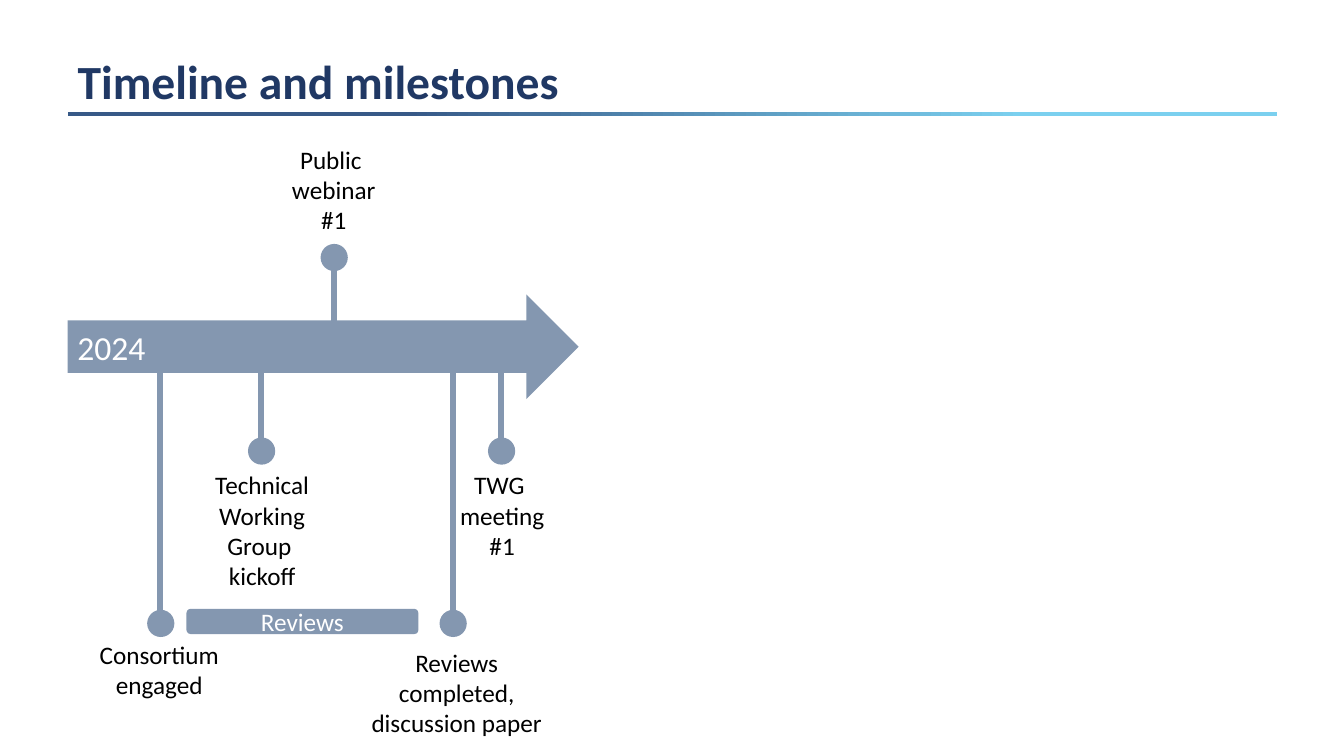
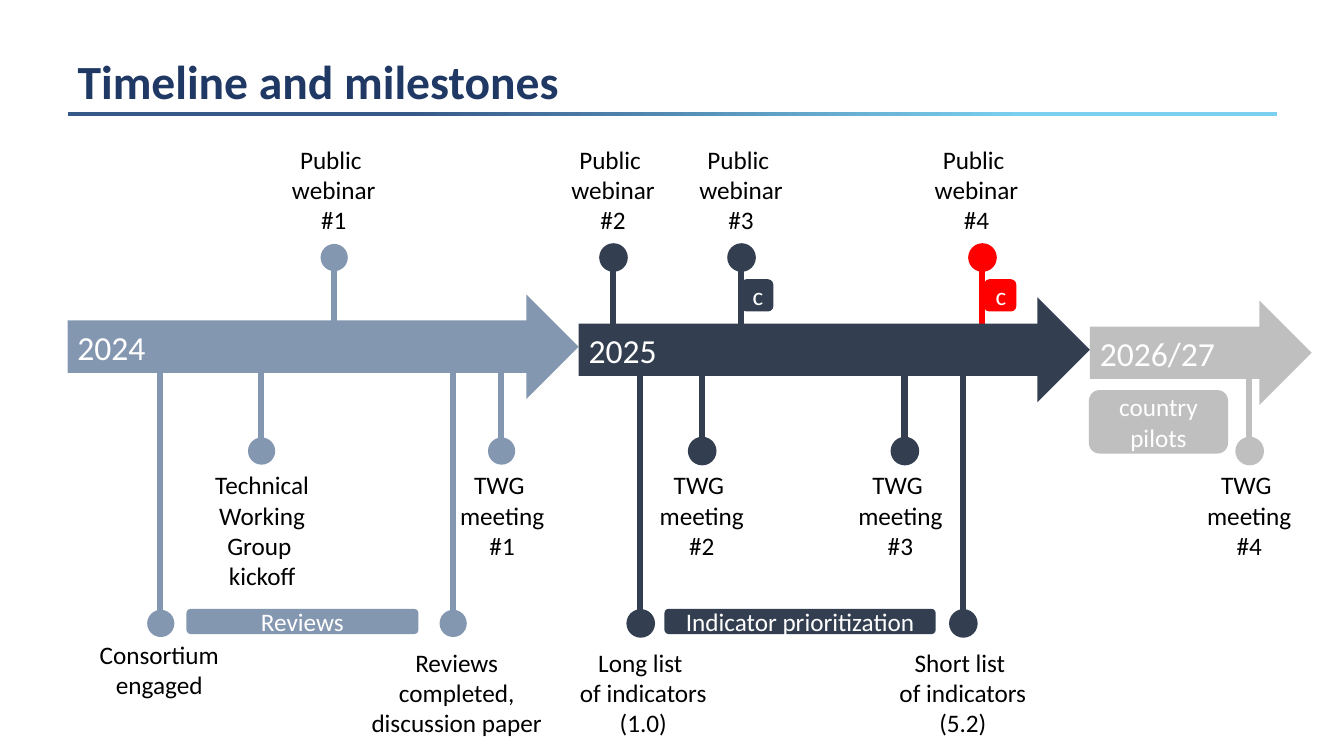
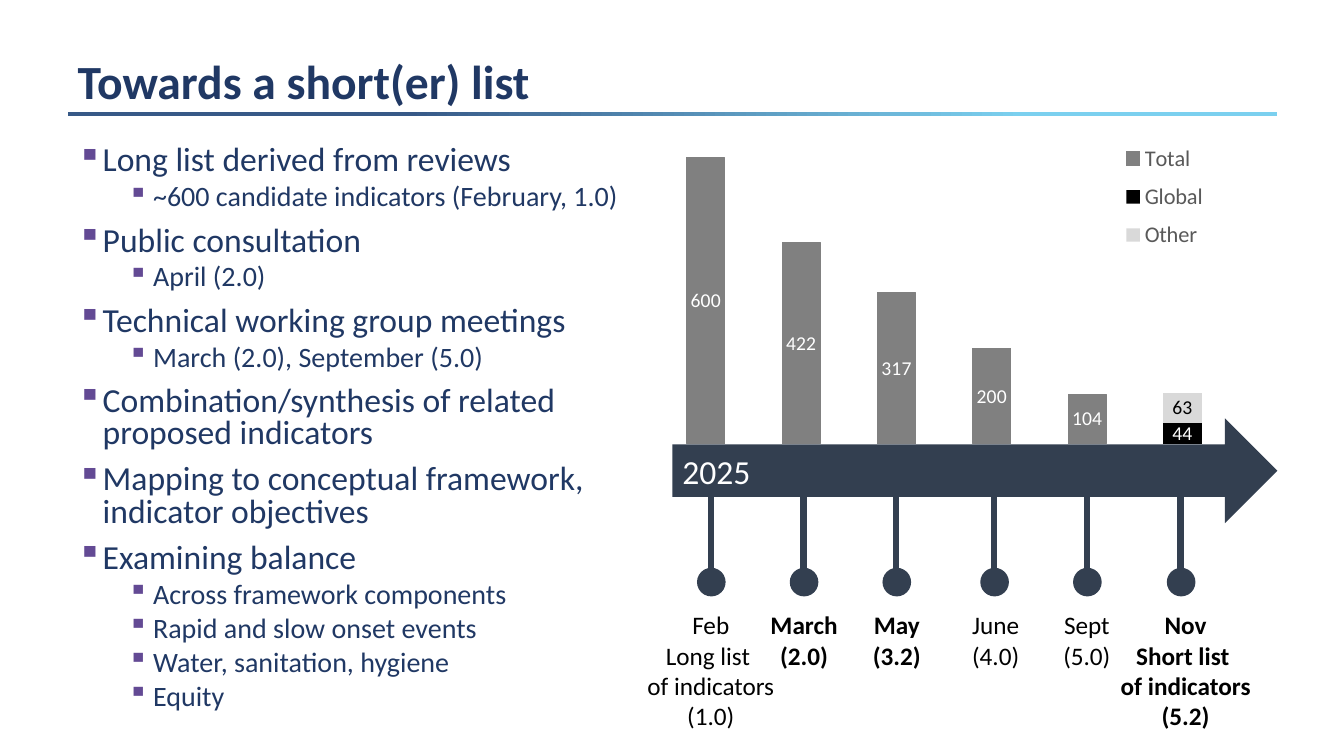
"""Build three slides on the timeline and milestones of an indicator list."""
from dataclasses import dataclass
from typing import NamedTuple

import lxml.etree
import pptx
import pptx.chart.data
import pptx.dml.color
import pptx.enum.chart
import pptx.enum.shapes
import pptx.enum.text
import pptx.oxml.ns
import pptx.util

SCALE = 9144
FONT = "Calibri"
COLOURS = {
    "title": "203864", "rule_start": "375987", "rule_end": "7BD0EF",
    "slate": "8497B0", "navy": "333F50", "pale": "BFBFBF", "alert": "FF0000",
    "black": "000000", "white": "FFFFFF", "bullet": "634A94",
    "total": "808080", "other": "D9D9D9", "legend": "595959",
}
SHAPE = pptx.enum.shapes.MSO_SHAPE
ALIGN = pptx.enum.text.PP_ALIGN
ANCHOR = pptx.enum.text.MSO_ANCHOR
FIT = pptx.enum.text.MSO_AUTO_SIZE
qn = pptx.oxml.ns.qn


class Reach(NamedTuple):
    """Vertical positions of a pin's line, dot and label."""
    start: int
    end: int
    dot: int
    label: int


UP = Reach(323, 265, 242, 138)
MID = Reach(328, 438, 434, 461)
LOW = Reach(369, 609, 605, 637)
MONTH = Reach(467, 569, 564, 600)
DOT = 27


@dataclass(frozen=True)
class Milestone:
    """A pin on the timeline with its label."""
    x: int
    reach: Reach
    tone: str
    text: str
    left: int
    width: int
    rows: int = 3
    bold: bool = False


@dataclass(frozen=True)
class Block:
    """A filled shape with white text."""
    kind: pptx.enum.shapes.MSO_SHAPE
    left: int
    top: int
    width: int
    height: int
    tone: str
    text: str


class Series(NamedTuple):
    """One chart series with its fill and label colours."""
    name: str
    values: tuple
    tone: str
    label: str


def arrow(left: int, top: int, width: int, tone: str, text: str) -> Block:
    """Describe a year arrow."""
    return Block(SHAPE.RIGHT_ARROW, left, top, width, 104, tone, text)


def tag(left: int, top: int, width: int, height: int, tone: str, text: str) -> Block:
    """Describe a rounded tag."""
    return Block(SHAPE.ROUNDED_RECTANGLE, left, top, width, height, tone, text)


def webinar(x: int, number: int, tone: str, left: int, width: int) -> Milestone:
    """Describe a public webinar above the arrow."""
    return Milestone(x, UP, tone, f"Public \nwebinar\n#{number}", left, width)


def meeting(x: int, number: int, tone: str, left: int) -> Milestone:
    """Describe a working group meeting below the arrow."""
    return Milestone(x, MID, tone, f"TWG \nmeeting\n#{number}", left, 128)


PINS_2024 = [
    Milestone(159, LOW._replace(label=629), "slate", "Consortium engaged", 63, 190, 2),
    Milestone(259, MID, "slate", "Technical Working Group \nkickoff", 176, 168, 4),
    webinar(331, 1, "slate", 277, 108),
    Milestone(449, LOW, "slate", "Reviews completed, discussion paper", 358, 190),
    meeting(497, 1, "slate", 434),
]
BLOCKS_2024 = [
    arrow(67, 292, 507, "slate", "2024"),
    tag(185, 604, 230, 25, "slate", "Reviews"),
]
PINS_LATER = [
    webinar(608, 2, "navy", 556, 104),
    Milestone(635, LOW, "navy", "Long list \vof indicators (1.0)", 543, 190),
    meeting(696, 2, "navy", 632),
    webinar(735, 3, "navy", 680, 110),
    meeting(897, 3, "navy", 829),
    Milestone(955, LOW, "navy", "Short list \vof indicators (5.2)", 860, 190),
    webinar(974, 4, "alert", 915, 107),
    meeting(1239, 4, "pale", 1175),
]
BLOCKS_LATER = [
    arrow(1081, 298, 220, "pale", "2026/27"),
    tag(1080, 387, 138, 63, "pale", "country pilots"),
    tag(659, 604, 269, 25, "navy", "Indicator prioritization"),
    tag(976, 277, 32, 32, "alert", "c"),
    arrow(574, 295, 507, "navy", "2025"),
    tag(735, 277, 32, 32, "navy", "c"),
]
PINS_MONTHS = [
    Milestone(705, MONTH, "navy", "Feb\vLong list \vof indicators (1.0)", 610, 190, 4),
    Milestone(797, MONTH, "navy", "March\n(2.0)", 754, 87, 2, True),
    Milestone(889, MONTH, "navy", "May\n(3.2)", 846, 87, 2, True),
    Milestone(986, MONTH, "navy", "June\n(4.0)", 942, 91, 2),
    Milestone(1078, MONTH, "navy", "Sept\n(5.0)", 983, 190, 2),
    Milestone(1171, MONTH, "navy", "Nov\vShort list \vof indicators (5.2)", 1081, 190, 4, True),
]
SERIES = [
    Series("Total", (600, 422, 317, 200, 104, None), "total", "white"),
    Series("Global", (None,) * 5 + (44,), "black", "white"),
    Series("Other", (None,) * 5 + (63,), "other", "black"),
]
POINTS = [
    (0, "Long list derived from reviews"),
    (1, "~600 candidate indicators (February, 1.0)"),
    (0, "Public consultation"),
    (1, "April (2.0)"),
    (0, "Technical working group meetings"),
    (1, "March (2.0), September (5.0)"),
    (0, "Combination/synthesis of related proposed indicators"),
    (0, "Mapping to conceptual framework, indicator objectives"),
    (0, "Examining balance"),
    (1, "Across framework components"),
    (1, "Rapid and slow onset events"),
    (1, "Water, sanitation, hygiene"),
    (1, "Equity"),
]


def px(*lengths: int) -> list[int]:
    """Turn px into EMU."""
    return [pptx.util.Emu(n * SCALE) for n in lengths]


def rgb(tone: str) -> pptx.dml.color.RGBColor:
    """Look up a colour by name."""
    return pptx.dml.color.RGBColor.from_string(COLOURS[tone])


def style(font, size: int, tone: str, bold: bool = False) -> None:
    """Format a font."""
    font.name, font.size, font.bold = FONT, pptx.util.Pt(size), bold
    font.color.rgb = rgb(tone)


def write(tf, text: str, size: int, tone: str, align=ALIGN.CENTER, bold: bool = False) -> None:
    """Fill a text frame with paragraphs, breaking lines at vertical tabs."""
    tf.word_wrap = True
    for i, line in enumerate(text.split("\n")):
        p = tf.add_paragraph() if i else tf.paragraphs[0]
        p.alignment = align
        for j, part in enumerate(line.split("\v")):
            if j:
                p.add_line_break()
            r = p.add_run()
            r.text = part
            style(r.font, size, tone, bold)


def add_shape(s, kind, left: int, top: int, width: int, height: int, tone: str):
    """Draw a flat shape without an outline."""
    sp = s.shapes.add_shape(kind, *px(left, top, width, height))
    sp.shadow.inherit = False
    sp.fill.solid()
    sp.fill.fore_color.rgb = rgb(tone)
    sp.line.fill.background()
    return sp


def add_block(s, block: Block) -> None:
    """Draw an arrow or a tag."""
    sp = add_shape(s, block.kind, block.left, block.top, block.width, block.height, block.tone)
    sp.text_frame.vertical_anchor = ANCHOR.MIDDLE
    is_arrow = block.kind == SHAPE.RIGHT_ARROW
    write(sp.text_frame, block.text, 24 if is_arrow else 18, "white",
          ALIGN.LEFT if is_arrow else ALIGN.CENTER)


def add_milestone(s, m: Milestone) -> None:
    """Draw a pin and its label."""
    line = s.shapes.add_connector(pptx.enum.shapes.MSO_CONNECTOR.STRAIGHT,
                                  *px(m.x, m.reach.start, m.x, m.reach.end))
    line.line.color.rgb = rgb(m.tone)
    line.line.width = pptx.util.Pt(4.5)
    lxml.etree.SubElement(line._element.spPr, qn("a:effectLst"))
    dot = add_shape(s, SHAPE.OVAL, m.x - DOT // 2, m.reach.dot, DOT, DOT, m.tone)
    if m.tone != "slate":
        dot.line.color.rgb = rgb(m.tone)
        dot.line.width = pptx.util.Pt(1)
    label = s.shapes.add_textbox(*px(m.left, m.reach.label, m.width, 11 + 30 * m.rows))
    write(label.text_frame, m.text, 18, "black", bold=m.bold)
    label.text_frame.auto_size = FIT.SHAPE_TO_FIT_TEXT


def add_slide(prs, title: str, pins: list[Milestone], blocks: list[Block]):
    """Add a titled slide with its timeline."""
    s = prs.slides.add_slide(prs.slide_layouts[5])
    rule = add_shape(s, SHAPE.RECTANGLE, 67, 111, 1200, 4, "rule_start")
    rule.fill.gradient()
    rule.fill.gradient_angle = 0
    stops = ((0.28, "rule_start"), (0.79, "rule_end"))
    for stop, (position, tone) in zip(rule.fill.gradient_stops, stops):
        stop.position, stop.color.rgb = position, rgb(tone)
    sp = s.shapes.title
    sp.left, sp.top, sp.width, sp.height = px(67, 22, 1200, 92)
    tf = sp.text_frame
    tf.vertical_anchor, tf.auto_size = ANCHOR.BOTTOM, FIT.NONE
    write(tf, title, 34, "title", ALIGN.LEFT, True)
    tf.paragraphs[0].line_spacing = 0.9
    for pin in pins:
        add_milestone(s, pin)
    for block in blocks:
        add_block(s, block)
    return s


def add_points(s) -> None:
    """Write the bulleted list."""
    tf = s.shapes.add_textbox(*px(67, 140, 565, 610)).text_frame
    write(tf, "\n".join(text for _, text in POINTS), 24, "title", ALIGN.LEFT)
    for p, (level, _) in zip(tf.paragraphs, POINTS):
        p.level, p.line_spacing = level, 0.8
        p.space_before = pptx.util.Pt(5 if level else 10)
        p.runs[0].font.size = pptx.util.Pt(20 if level else 24)
        pPr = p._p.get_or_add_pPr()
        pPr.set("marL", str(px(75 if level else 25)[0]))
        pPr.set("indent", str(px(-25)[0]))
        colour = lxml.etree.SubElement(pPr, qn("a:buClr"))
        lxml.etree.SubElement(colour, qn("a:srgbClr"), val=COLOURS["bullet"])
        lxml.etree.SubElement(pPr, qn("a:buChar"), char="▪")


def place(element, index: int, inner: bool, **fractions: float) -> None:
    """Give a chart part a fixed place within the chart."""
    for old in element.findall(qn("c:layout")):
        element.remove(old)
    layout = lxml.etree.Element(qn("c:layout"))
    manual = lxml.etree.SubElement(layout, qn("c:manualLayout"))
    if inner:
        lxml.etree.SubElement(manual, qn("c:layoutTarget"), val="inner")
    for mode in ("xMode", "yMode"):
        lxml.etree.SubElement(manual, qn(f"c:{mode}"), val="edge")
    for key, value in fractions.items():
        lxml.etree.SubElement(manual, qn(f"c:{key}"), val=str(value))
    element.insert(index, layout)


def add_counts(s) -> None:
    """Draw the stacked columns of indicator counts."""
    data = pptx.chart.data.CategoryChartData()
    data.categories = [str(n) for n in range(1, 7)]
    for series in SERIES:
        data.add_series(series.name, series.values)
    chart = s.shapes.add_chart(pptx.enum.chart.XL_CHART_TYPE.COLUMN_STACKED,
                               *px(641, 102, 591, 389), data).chart
    style(chart.font, 10, "black")
    chart.has_title = False
    chart.category_axis.visible = chart.value_axis.visible = False
    chart.value_axis.has_major_gridlines = False
    chart.value_axis.minimum_scale, chart.value_axis.maximum_scale = 0, 600
    plot = chart.plots[0]
    plot.gap_width, plot.overlap, plot.vary_by_categories = 150, 100, False
    for drawn, series in zip(plot.series, SERIES):
        drawn.format.fill.solid()
        drawn.format.fill.fore_color.rgb = rgb(series.tone)
        labels = drawn.data_labels
        labels.show_value = True
        labels.position = pptx.enum.chart.XL_LABEL_POSITION.CENTER
        style(labels.font, 14, series.label)
    edge = plot.series[0].format.line
    edge.color.rgb, edge.width = rgb("total"), pptx.util.Pt(0.75)
    chart.has_legend = True
    legend = chart.legend
    legend.position = pptx.enum.chart.XL_LEGEND_POSITION.BOTTOM
    legend.include_in_layout = False
    style(legend.font, 16, "legend")
    place(legend._element, 1, False, x=0.78, y=0.08, w=0.18, h=0.32)
    place(chart._chartSpace.chart.plotArea, 0, True, x=0.02, y=0.14, w=0.96, h=0.73)


def main() -> None:
    """Build and save the presentation."""
    prs = pptx.Presentation()
    prs.slide_width, prs.slide_height = px(1333, 750)
    add_slide(prs, "Timeline and milestones", PINS_2024, BLOCKS_2024)
    add_slide(prs, "Timeline and milestones", PINS_2024 + PINS_LATER, BLOCKS_2024 + BLOCKS_LATER)
    s = add_slide(prs, "Towards a short(er) list", PINS_MONTHS,
                  [arrow(667, 415, 600, "navy", "2025")])
    add_counts(s)
    add_points(s)
    prs.save("out.pptx")


if __name__ == "__main__":
    main()
